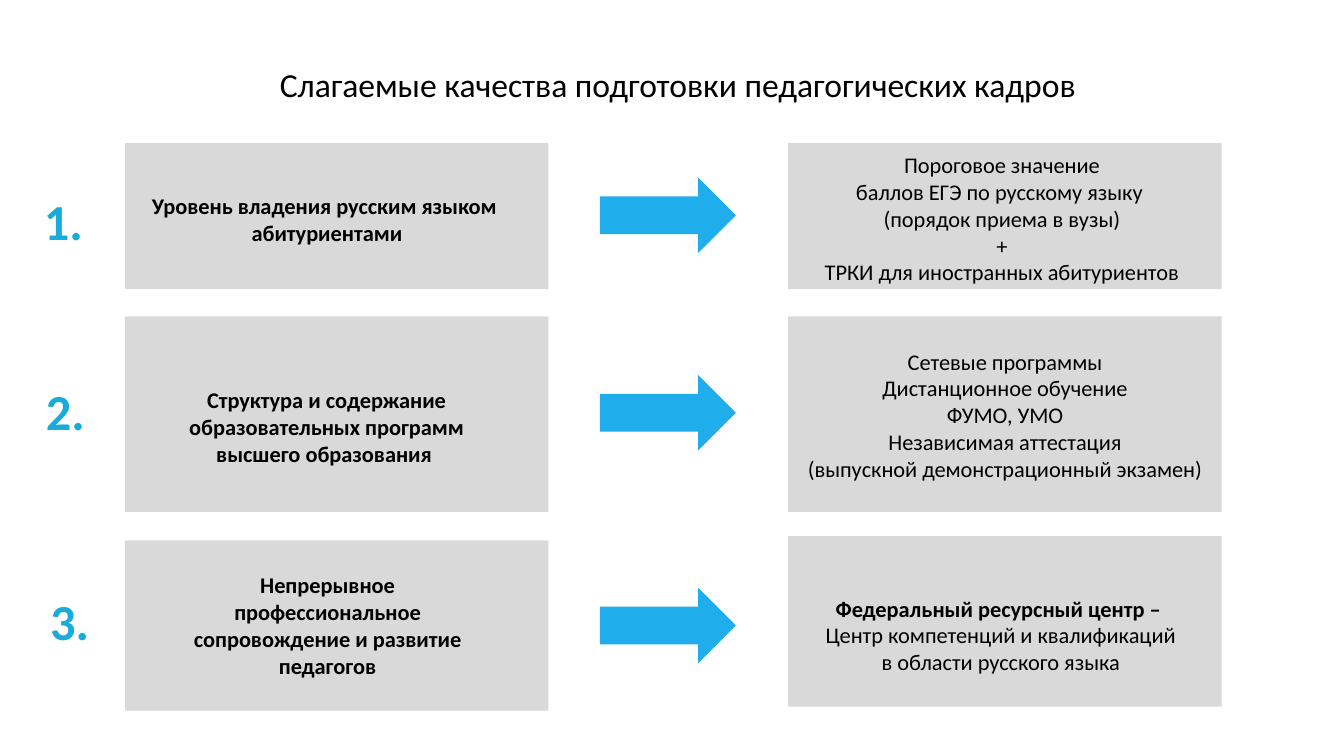
from dataclasses import dataclass

from pptx import Presentation
from pptx.dml.color import RGBColor
from pptx.enum.shapes import MSO_SHAPE
from pptx.enum.text import MSO_ANCHOR, MSO_AUTO_SIZE, PP_ALIGN
from pptx.util import Pt

RECTANGLE = MSO_SHAPE.RECTANGLE
RIGHT_ARROW = MSO_SHAPE.RIGHT_ARROW
CENTER = PP_ALIGN.CENTER
TOP = MSO_ANCHOR.TOP
MIDDLE = MSO_ANCHOR.MIDDLE
NO_AUTO_SIZE = MSO_AUTO_SIZE.NONE
TITLE_ONLY = 5


@dataclass(frozen=True)
class Theme:
    font: str = "Calibri"
    text: RGBColor = RGBColor(0x00, 0x00, 0x00)
    panel: RGBColor = RGBColor(0xD9, 0xD9, 0xD9)
    arrow: RGBColor = RGBColor(0x20, 0xAD, 0xEC)
    number: RGBColor = RGBColor(0x19, 0xAB, 0xD9)
    title_size: int = 24
    body_size: int = 16
    number_size: int = 36


class SlideBuilder:
    def __init__(self, slide, theme):
        self.slide = slide
        self.theme = theme

    def fill_text(self, frame, paragraphs, size, color, anchor=TOP, wrap=True):
        """Fill a frame with (text, bold) paragraphs; a newline is a line break."""
        frame.auto_size = NO_AUTO_SIZE
        frame.word_wrap = wrap
        frame.vertical_anchor = anchor
        for index, (text, bold) in enumerate(paragraphs):
            paragraph = frame.add_paragraph() if index else frame.paragraphs[0]
            paragraph.alignment = CENTER
            for line_index, line in enumerate(text.split("\n")):
                if line_index:
                    paragraph.add_line_break()
                run = paragraph.add_run()
                run.text = line
                run.font.name = self.theme.font
                run.font.size = Pt(size)
                run.font.bold = bold
                run.font.color.rgb = color

    def title(self, text, left, top, width, height):
        shape = self.slide.shapes.title
        shape.left, shape.top = Pt(left), Pt(top)
        shape.width, shape.height = Pt(width), Pt(height)
        self.fill_text(shape.text_frame, [(text, False)], self.theme.title_size,
                       self.theme.text, MIDDLE, wrap=False)

    def block(self, kind, color, left, top, width, height):
        shape = self.slide.shapes.add_shape(
            kind, Pt(left), Pt(top), Pt(width), Pt(height))
        shape.shadow.inherit = False
        shape.fill.solid()
        shape.fill.fore_color.rgb = color
        shape.line.fill.background()

    def panel(self, left, top, width, height):
        self.block(RECTANGLE, self.theme.panel, left, top, width, height)

    def arrow(self, left, top, width, height):
        self.block(RIGHT_ARROW, self.theme.arrow, left, top, width, height)

    def text_box(self, paragraphs, size, color, left, top, width, height):
        box = self.slide.shapes.add_textbox(
            Pt(left), Pt(top), Pt(width), Pt(height))
        self.fill_text(box.text_frame, paragraphs, size, color)

    def body(self, paragraphs, area):
        self.text_box(paragraphs, self.theme.body_size, self.theme.text, *area)

    def number(self, text, left, top):
        self.text_box([(text, True)], self.theme.number_size,
                      self.theme.number, left, top, 47.5, 51)


@dataclass(frozen=True)
class Row:
    """One quality factor and its measure; areas are left, top, width, height."""
    number_at: tuple
    factor_top: float
    measure_top: float
    height: float
    arrow_top: float
    factor_area: tuple
    factor: list
    measure_area: tuple
    measure: list


ROWS = [
    Row((21.6, 132.5), 102.2, 102.2, 104.4, 126.7,
        (75.6, 133.9, 316, 72.7),
        [("Уровень владения русским языком ", True),
         ("абитуриентами", True)],
        (571, 104.4, 289.4, 104.4),
        [("Пороговое значение", False),
         ("баллов ЕГЭ по русскому языку \n(порядок приема в вузы)", False),
         ("+", False),
         ("ТРКИ для иностранных абитуриентов", False)]),
    Row((23, 267.8), 226, 226, 139.7, 267.8,
        (97.2, 272.2, 272.2, 65.5),
        [("Структура и содержание образовательных программ "
          "высшего образования ", True)],
        (556.6, 244.8, 322.6, 104.4),
        [("Сетевые программы", False),
         ("Дистанционное обучение", False),
         ("ФУМО, УМО", False),
         ("Независимая аттестация", False),
         ("(выпускной демонстрационный экзамен)", False)]),
    Row((25.9, 418.3), 386, 383, 121.7, 419.8,
        (97.9, 404.6, 272.2, 85),
        [("Непрерывное", True),
         ("профессиональное", True),
         ("сопровождение и развитие педагогов", True)],
        (570.2, 421.2, 289.4, 65.5),
        [("Федеральный ресурсный центр – ", True),
         ("Центр компетенций и квалификаций", False),
         ("в области русского языка", False)]),
]


def main():
    presentation = Presentation()
    presentation.slide_width, presentation.slide_height = Pt(960), Pt(540)
    slide = presentation.slides.add_slide(presentation.slide_layouts[TITLE_ONLY])
    builder = SlideBuilder(slide, Theme())

    builder.title("Слагаемые качества подготовки педагогических кадров",
                  187.2, 42, 594, 36)
    for position, row in enumerate(ROWS, start=1):
        builder.panel(89.3, row.factor_top, 302.4, row.height)
        builder.panel(563, row.measure_top, 309.6, row.height)
        builder.arrow(428.4, row.arrow_top, 97.2, 54)
        builder.number(f"{position}.", *row.number_at)
        builder.body(row.factor, row.factor_area)
        builder.body(row.measure, row.measure_area)

    presentation.save("out.pptx")


if __name__ == "__main__":
    main()
